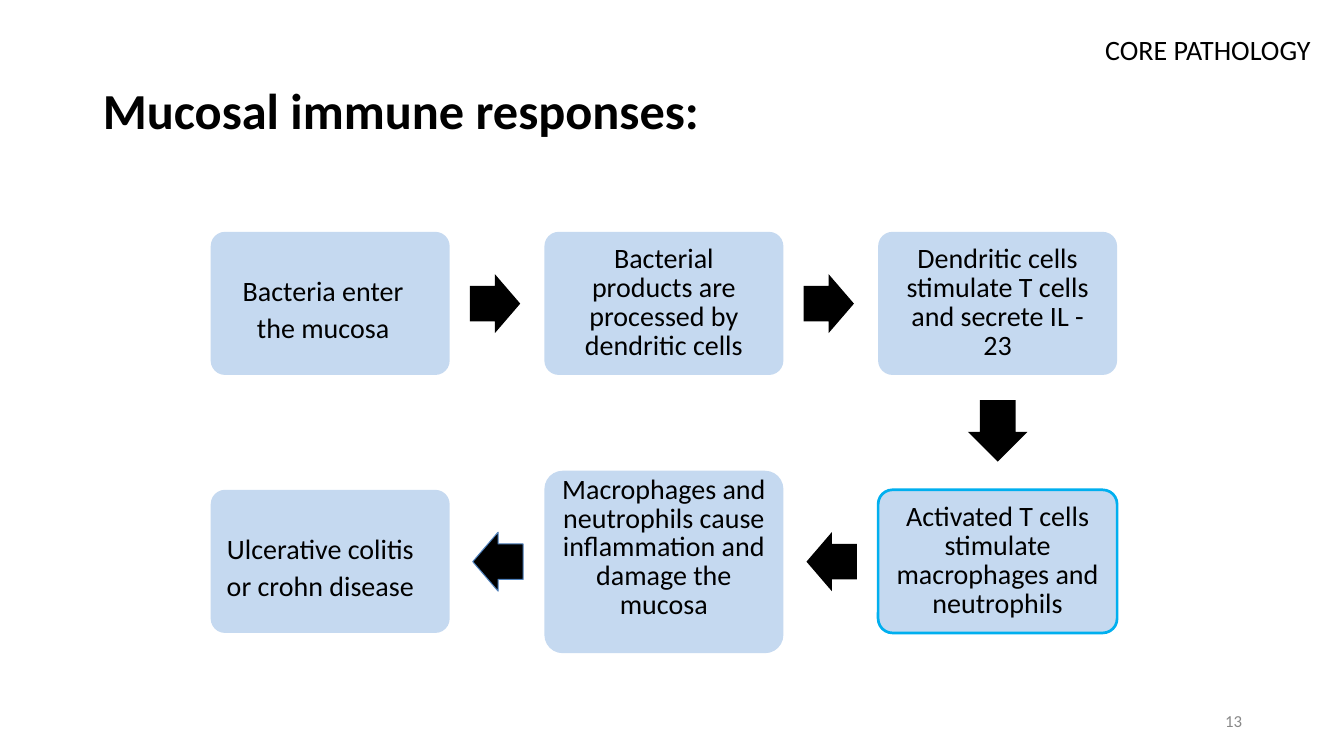
from pptx import Presentation
from pptx.dml.color import RGBColor
from pptx.enum.shapes import MSO_SHAPE
from pptx.enum.text import MSO_ANCHOR, MSO_AUTO_SIZE, PP_ALIGN
from pptx.util import Inches, Pt

ROUNDED = MSO_SHAPE.ROUNDED_RECTANGLE
RIGHT, LEFT, DOWN = MSO_SHAPE.RIGHT_ARROW, MSO_SHAPE.LEFT_ARROW, MSO_SHAPE.DOWN_ARROW
TOP, MIDDLE = MSO_ANCHOR.TOP, MSO_ANCHOR.MIDDLE
AL_LEFT, AL_CENTER, AL_RIGHT = PP_ALIGN.LEFT, PP_ALIGN.CENTER, PP_ALIGN.RIGHT
NO_FIT = MSO_AUTO_SIZE.NONE
TITLE_ONLY = 5

# Flow grid, in percent of the slide's width and height
COL0, COL_STEP, BOX_W = 15.68, 24.83, 17.78
ROW0, ROW_STEP, BOX_H = 30.67, 34.13, 18.93
TIGHT, LOOSE = 0.86, 1.11


def rgb(value):
    return RGBColor.from_string(value)


class Deck:
    font = "Calibri"
    ink, panel, muted = "000000", "C5D9F0", "888888"

    def __init__(self, prs):
        self.prs = prs
        self.s = prs.slides.add_slide(prs.slide_layouts[TITLE_ONLY])

    def area(self, x, y, w, h):
        """Turn percentages of the slide into a left, top, width, height list."""
        W, H = self.prs.slide_width, self.prs.slide_height
        return [int(W * x / 100), int(H * y / 100), int(W * w / 100), int(H * h / 100)]

    def fill_text(self, sp, lines, size, align, anchor=TOP, color=ink, bold=False,
                  spacing=1.0, insets=(7.2, 3.6, 7.2, 3.6)):
        """Fill a shape with paragraphs; insets are left, top, right, bottom points."""
        tf = sp.text_frame
        tf.word_wrap = True
        tf.auto_size = NO_FIT
        tf.vertical_anchor = anchor
        tf.margin_left, tf.margin_top, tf.margin_right, tf.margin_bottom = map(Pt, insets)
        for i, line in enumerate(lines):
            p = tf.add_paragraph() if i else tf.paragraphs[0]
            p.alignment = align
            p.line_spacing = spacing
            r = p.add_run()
            r.text = line
            r.font.name = self.font
            r.font.size = Pt(size)
            r.font.bold = bold
            r.font.color.rgb = rgb(color)

    def title(self, text, x, y, w, h):
        sp = self.s.shapes.title
        sp.left, sp.top, sp.width, sp.height = self.area(x, y, w, h)
        self.fill_text(sp, [text], 36, AL_LEFT, MIDDLE, bold=True, spacing=0.9)

    def label(self, text, x, y, w, h, size, **style):
        sp = self.s.shapes.add_textbox(*self.area(x, y, w, h))
        self.fill_text(sp, [text], size, AL_RIGHT, **style)

    def shape(self, kind, x, y, w, h, fill, adjust, line=None, line_width=0.75):
        sp = self.s.shapes.add_shape(kind, *self.area(x, y, w, h))
        sp.shadow.inherit = False
        for i, value in enumerate(adjust):
            sp.adjustments[i] = value
        sp.fill.solid()
        sp.fill.fore_color.rgb = rgb(fill)
        if line:
            sp.line.color.rgb = rgb(line)
            sp.line.width = Pt(line_width)
        else:
            sp.line.fill.background()
        return sp

    def step(self, col, row, lines, insets, spacing=TIGHT, lift=0, h=BOX_H, line=None):
        """Add a flow box; lift raises it above its grid row."""
        sp = self.shape(ROUNDED, COL0 + col * COL_STEP, ROW0 + row * ROW_STEP - lift,
                        BOX_W, h, self.panel, [0.1], line, 1.92)
        self.fill_text(sp, lines, 20, AL_CENTER, spacing=spacing, insets=insets)

    def arrow(self, kind, x, y, w, h, head, line=None):
        self.shape(kind, x, y, w, h, self.ink, [0.6, head], line)


def main():
    prs = Presentation()
    prs.slide_width, prs.slide_height = Inches(13.33), Inches(7.5)
    d = Deck(prs)

    d.title("Mucosal immune responses:", 6.9, 5.33, 86.27, 19.33)
    d.label("CORE PATHOLOGY", 65.64, 4.13, 31.88, 4.67, 20, insets=(0, 0.7, 0, 0))
    d.label("13", 70.67, 92.67, 22.5, 5.33, 12, anchor=MIDDLE, color=d.muted)

    d.step(0, 0, ["Bacteria enter", "the mucosa"], (14, 24, 24, 0), LOOSE)
    d.step(1, 0, ["Bacterial products are processed by dendritic cells"], (21, 7, 21, 0))
    d.step(2, 0, ["Dendritic cells stimulate T cells and secrete IL - 23"], (10, 7, 10, 0))
    d.step(2, 1, ["Activated T cells stimulate macrophages and neutrophils"],
           (9, 7, 9, 0), line="00AFEF")
    d.step(1, 1, ["Macrophages and neutrophils cause inflammation and damage the mucosa"],
           (8, 0, 8, 0), lift=2.53, h=24.13)
    d.step(0, 1, ["Ulcerative colitis", "or crohn disease"], (4, 24, 18, 0), LOOSE)

    for col, outline in enumerate(["4F81BC", None]):
        x = COL0 + col * COL_STEP
        d.arrow(RIGHT, x + 19.28, 36.27, 3.75, 7.8, 0.43 * 1.17)
        d.arrow(LEFT, x + 19.5, 70.4, 3.75, 7.8, 0.43 * 1.17, outline)
    d.arrow(DOWN, 72.02, 52.93, 4.43, 8.13, 0.5)

    prs.save("out.pptx")


if __name__ == "__main__":
    main()
